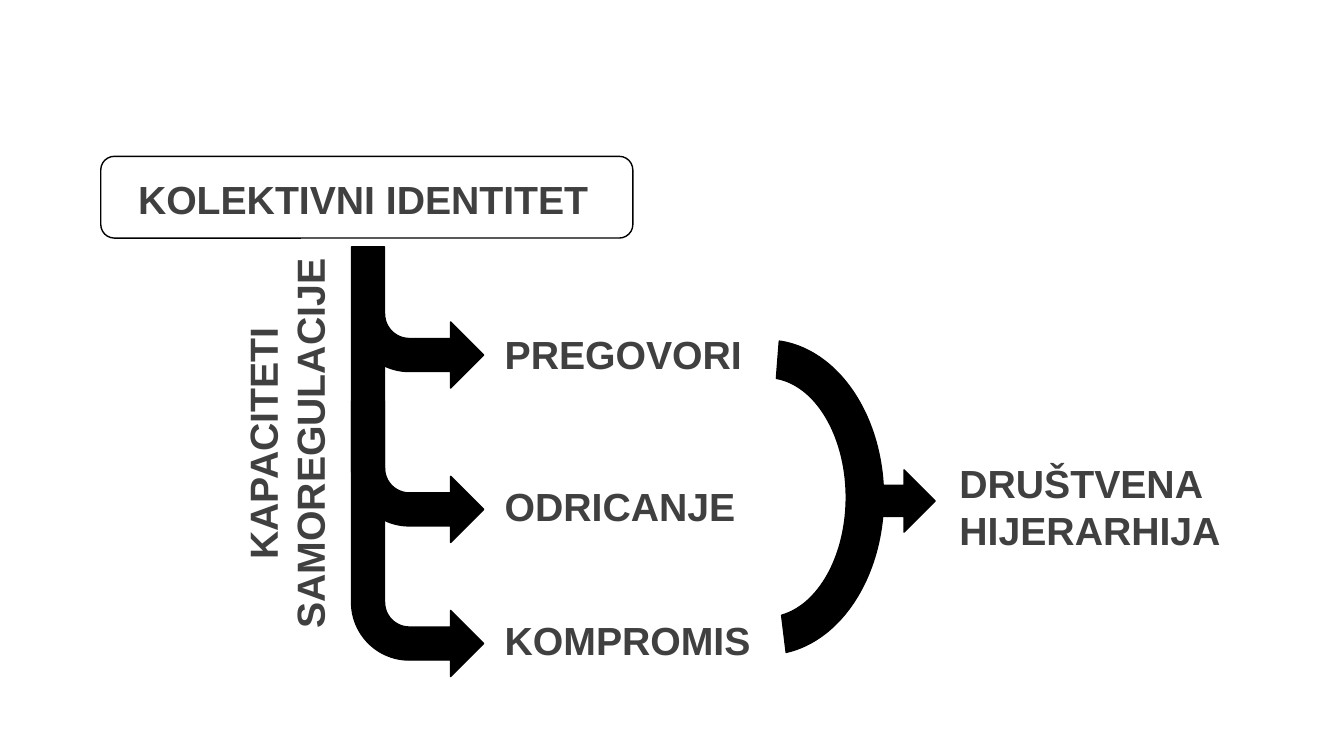
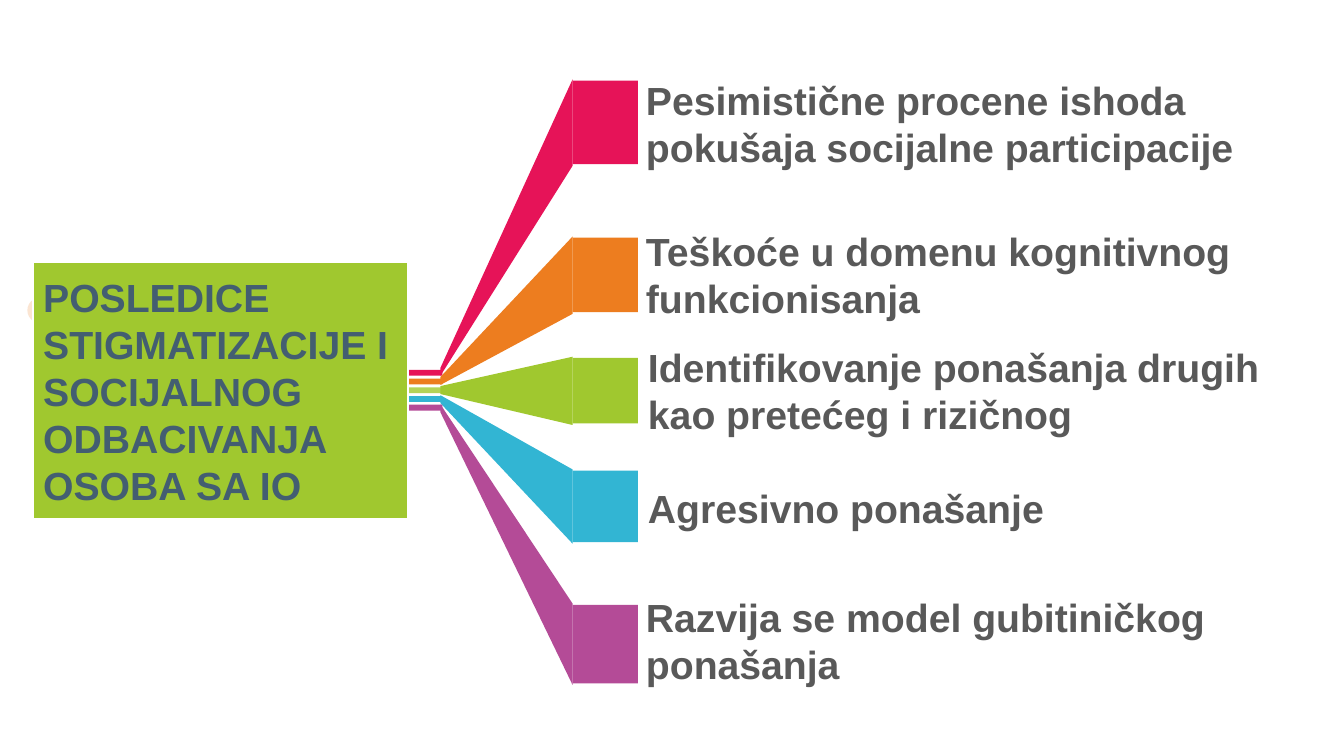
from lxml import etree
from pptx import Presentation
from pptx.dml.color import RGBColor
from pptx.enum.shapes import MSO_SHAPE
from pptx.enum.text import MSO_ANCHOR, PP_ALIGN
from pptx.oxml.ns import qn
from pptx.util import Cm, Pt

RECT = MSO_SHAPE.RECTANGLE
ROUND = MSO_SHAPE.ROUNDED_RECTANGLE
OVAL = MSO_SHAPE.OVAL
BENT = MSO_SHAPE.BENT_ARROW
ARC = MSO_SHAPE.BLOCK_ARC
ARROW = MSO_SHAPE.RIGHT_ARROW
TOP, MIDDLE = MSO_ANCHOR.TOP, MSO_ANCHOR.MIDDLE
LEFT, CENTER = PP_ALIGN.LEFT, PP_ALIGN.CENTER

FONT, SIZE = "Arial", 28
BLACK, WHITE = "000000", "FFFFFF"
DARK, GRAY, SLATE = "404040", "595959", "435E71"
RED, ORANGE, GREEN = "E61358", "ED7D1F", "A0C82F"
BLUE, PURPLE = "32B5D3", "B44B97"

ONE, TWO = 1.45, 2.64  # heights of one and two lines of text

# top, height
BENDS = [(6.22, 3.56), (8.03, 9.02), (10.11, 3.56)]
# text, top
STEPS = [("PREGOVORI", 8.18), ("ODRICANJE", 12.01), ("KOMPROMIS", 15.39)]
# colour, block top, block height, text, text left, text top, text height
EFFECTS = [
    (RED, 2.03, 2.11,
     "Pesimistične procene ishoda pokušaja socijalne participacije",
     16.03, 1.8, TWO),
    (ORANGE, 5.99, 1.88,
     "Teškoće u domenu kognitivnog funkcionisanja", 16.03, 5.61, TWO),
    (GREEN, 9.02, 1.65,
     "Identifikovanje ponašanja drugih kao pretećeg i rizičnog",
     16.08, 8.53, TWO),
    (BLUE, 11.86, 1.8, "Agresivno ponašanje", 16.08, 12.07, ONE),
    (PURPLE, 15.24, 1.98,
     "Razvija se model gubitiničkog ponašanja", 16.03, 14.83, TWO),
]


def color(code):
    return RGBColor.from_string(code)


def paint(shape, fill=None, line=None, width=1, alpha=100):
    """Set fill, outline and opacity (in percent), without a shadow."""
    shape.shadow.inherit = False
    if fill:
        shape.fill.solid()
        shape.fill.fore_color.rgb = color(fill)
        if alpha < 100:
            tone = shape.element.spPr.find(qn("a:solidFill"))[0]
            etree.SubElement(tone, qn("a:alpha")).set("val", str(alpha * 1000))
    else:
        shape.fill.background()
    if line:
        shape.line.color.rgb = color(line)
        shape.line.width = Pt(width)
    else:
        shape.line.fill.background()


def add_form(slide, kind, box, **look):
    shape = slide.shapes.add_shape(kind, *map(Cm, box))
    paint(shape, **look)
    return shape


def add_wedge(slide, points, fill):
    points = [(Cm(x), Cm(y)) for x, y in points]
    pen = slide.shapes.build_freeform(*points[0])
    pen.add_line_segments(points[1:])
    paint(pen.convert_to_shape(), fill)


def write(shape, text, tone, anchor=MIDDLE, align=LEFT):
    frame = shape.text_frame
    frame.word_wrap = True
    frame.vertical_anchor = anchor
    para = frame.paragraphs[0]
    para.alignment = align
    run = para.add_run()
    run.text = text
    run.font.name = FONT
    run.font.size = Pt(SIZE)
    run.font.bold = True
    run.font.color.rgb = color(tone)


def add_label(slide, text, box, tone, **style):
    label = slide.shapes.add_textbox(*map(Cm, box))
    write(label, text, tone, **style)
    return label


def draw_paths(slide):
    solid = {"fill": BLACK, "line": BLACK}
    add_label(slide, "KOLEKTIVNI IDENTITET", (3.23, 4.29, 12.22, ONE), DARK)
    add_label(slide, "DRUŠTVENA HIJERARHIJA", (23.93, 11.43, 7.39, TWO), DARK)
    for top, high in BENDS:
        bend = add_form(slide, BENT, (8.86, top, 3.33, high), **solid)
        bend.element.spPr.find(qn("a:xfrm")).set("flipV", "1")
    for text, top in STEPS:
        add_label(slide, text, (12.47, top, 7.26, ONE), DARK)
    side = add_label(slide, "KAPACITETI SAMOREGULACIJE",
                     (1.09, 9.86, 12.22, TWO), DARK, align=CENTER)
    side.rotation = 270
    arc = add_form(slide, ARC, (15.37, 9.6, 7.92, 5.87), **solid)
    arc.rotation = 90
    for i, value in enumerate((110.69, 211.78, 0.16)):
        arc.adjustments[i] = value
    add_form(slide, ARROW, (21.87, 11.84, 1.7, 1.57), **solid)
    add_form(slide, ROUND, (2.54, 3.94, 13.41, 2.06), line=BLACK)


def draw_fan(slide):
    near, far = 11.1, 14.43
    add_form(slide, OVAL, (0.69, 7.5, 0.64, 0.64), fill=ORANGE, alpha=20)
    for i, (tone, top, high, text, left, line, tall) in enumerate(EFFECTS):
        add_form(slide, RECT, (6.07, 9.32 + 0.22 * i, 5.08, 0.15),
                 fill=tone, alpha=80 if tone == GREEN else 100)
        add_label(slide, text, (left, line, 17.4, tall), GRAY, anchor=TOP)
        add_form(slide, RECT, (far, top, 1.65, high), fill=tone)
        root = 9.27 + 0.23 * i
        add_wedge(slide, [(near, root), (far, top - 0.03),
                          (far, top + high + 0.04), (near, root + 0.2)], tone)
    box = add_form(slide, RECT, (0.84, 6.6, 9.45, 6.48),
                   fill=GREEN, line=WHITE, width=1.5)
    write(box, "POSLEDICE STIGMATIZACIJE I SOCIJALNOG ODBACIVANJA OSOBA SA IO",
          SLATE)


def main():
    deck = Presentation()
    deck.slide_width, deck.slide_height = Cm(33.87), Cm(19.05)
    for draw in (draw_paths, draw_fan):
        draw(deck.slides.add_slide(deck.slide_layouts[6]))
    deck.save("out.pptx")


if __name__ == "__main__":
    main()
